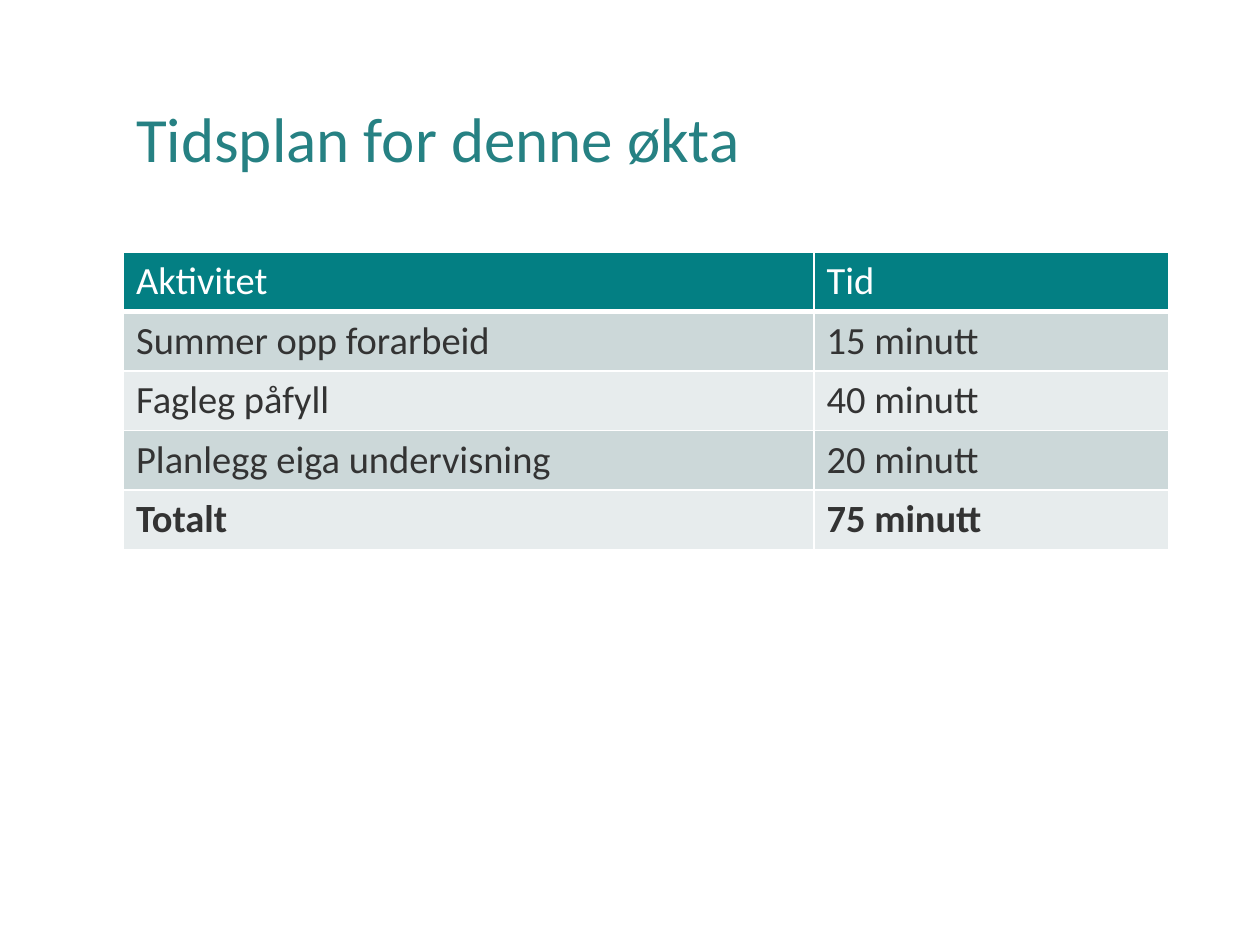
import pptx
import pptx.dml.color
import pptx.enum.text
import pptx.util
from lxml import etree
from pptx.oxml.ns import qn

Pt = pptx.util.Pt
RGBColor = pptx.dml.color.RGBColor

WHITE = RGBColor(0xFF, 0xFF, 0xFF)
TITLE_TEAL = RGBColor(0x26, 0x81, 0x83)
HEADER_TEAL = RGBColor(0x03, 0x7F, 0x83)
BAND_DARK = RGBColor(0xCC, 0xD8, 0xD9)
BAND_LIGHT = RGBColor(0xE7, 0xEC, 0xED)
TEXT_GREY = RGBColor(0x33, 0x33, 0x33)

FONT = "Calibri"
LEFT, WIDTH = 70.6, 597
COLUMN_WIDTHS = (394.6, 202.4)
ROW_HEIGHT = 33.6
SCHEDULE = (
    ("Aktivitet", "Tid"),
    ("Summer opp forarbeid", "15 minutt"),
    ("Fagleg påfyll", "40 minutt"),
    ("Planlegg eiga undervisning", "20 minutt"),
    ("Totalt", "75 minutt"),
)


def set_font(paragraph, size, color, bold=False):
    font = paragraph.font
    font.name = FONT
    font.size = Pt(size)
    font.bold = bold
    font.color.rgb = color


def add_title(slide, text):
    title = slide.shapes.title
    title.left, title.top = Pt(LEFT), Pt(28.8)
    title.width, title.height = Pt(WIDTH), Pt(104.4)
    frame = title.text_frame
    frame.text = text
    frame.word_wrap = True
    frame.vertical_anchor = pptx.enum.text.MSO_ANCHOR.MIDDLE
    paragraph = frame.paragraphs[0]
    paragraph.alignment = pptx.enum.text.PP_ALIGN.LEFT
    paragraph.line_spacing = 0.9
    set_font(paragraph, 36, TITLE_TEAL)


def set_borders(cell, top, bottom):
    properties = cell._tc.get_or_add_tcPr()
    for side, width in (("L", 1), ("R", 1), ("T", top), ("B", bottom)):
        line = etree.SubElement(properties, qn(f"a:ln{side}"), w=str(Pt(width)))
        fill = etree.SubElement(line, qn("a:solidFill"))
        etree.SubElement(fill, qn("a:srgbClr"), val=str(WHITE))


def format_cell(cell, text, row, last_row):
    is_header = row == 0
    # The rule under the header is thicker than the others
    set_borders(cell, top=3 if row == 1 else 1, bottom=3 if is_header else 1)
    cell.fill.solid()
    band = BAND_DARK if row % 2 else BAND_LIGHT
    cell.fill.fore_color.rgb = HEADER_TEAL if is_header else band
    cell.text = text
    set_font(cell.text_frame.paragraphs[0], 22,
             WHITE if is_header else TEXT_GREY, bold=row == last_row)


def add_schedule_table(slide, rows):
    table = slide.shapes.add_table(
        len(rows), len(COLUMN_WIDTHS), Pt(LEFT), Pt(144),
        Pt(WIDTH), Pt(ROW_HEIGHT * len(rows))).table
    for column, width in zip(table.columns, COLUMN_WIDTHS):
        column.width = Pt(width)
    for row, texts in enumerate(rows):
        table.rows[row].height = Pt(ROW_HEIGHT)
        for column, text in enumerate(texts):
            format_cell(table.cell(row, column), text, row, len(rows) - 1)


def main():
    presentation = pptx.Presentation()
    presentation.slide_width, presentation.slide_height = Pt(720), Pt(540)
    # Title Only layout
    slide = presentation.slides.add_slide(presentation.slide_layouts[5])
    add_title(slide, "Tidsplan for denne økta")
    add_schedule_table(slide, SCHEDULE)
    presentation.save("out.pptx")


if __name__ == "__main__":
    main()
